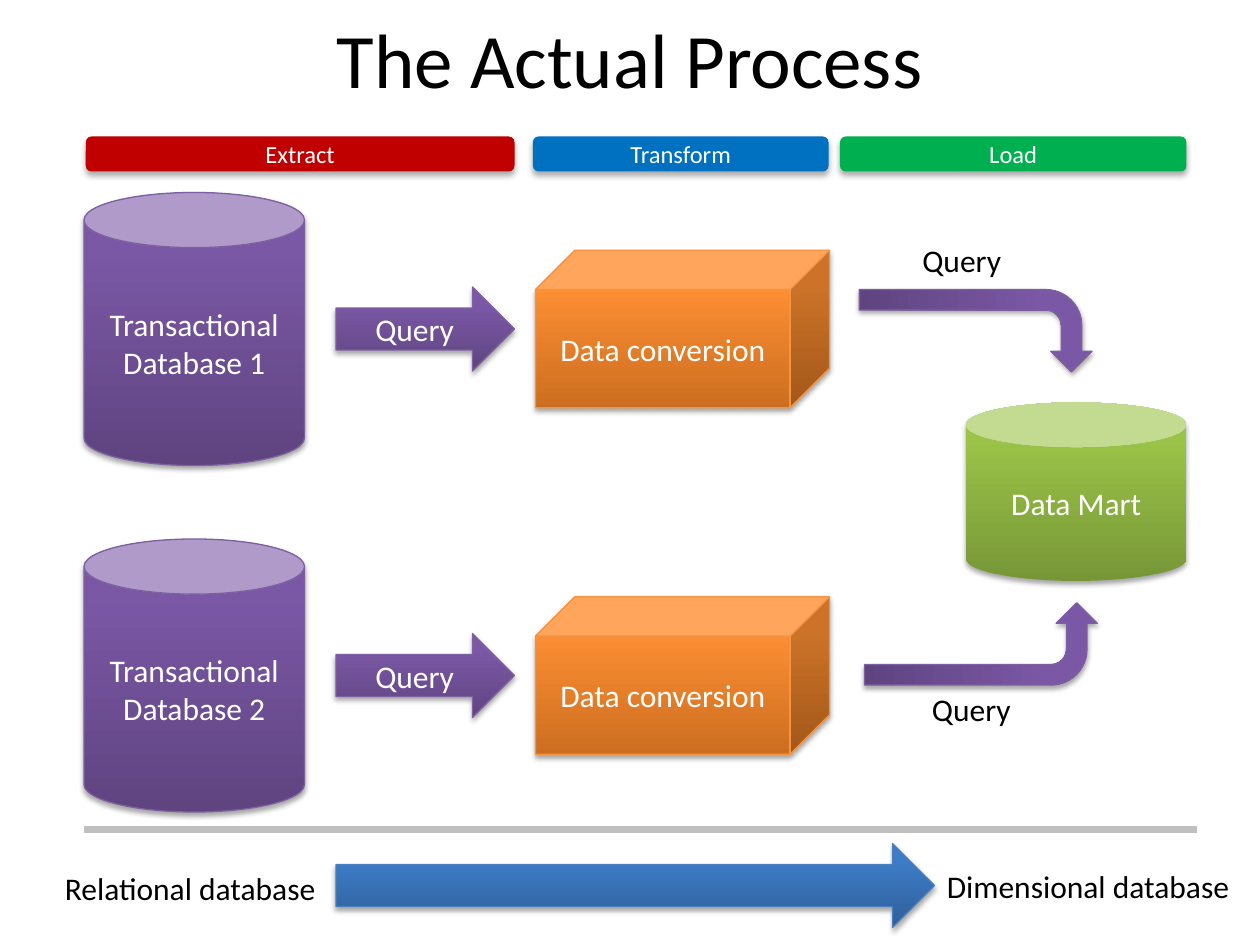
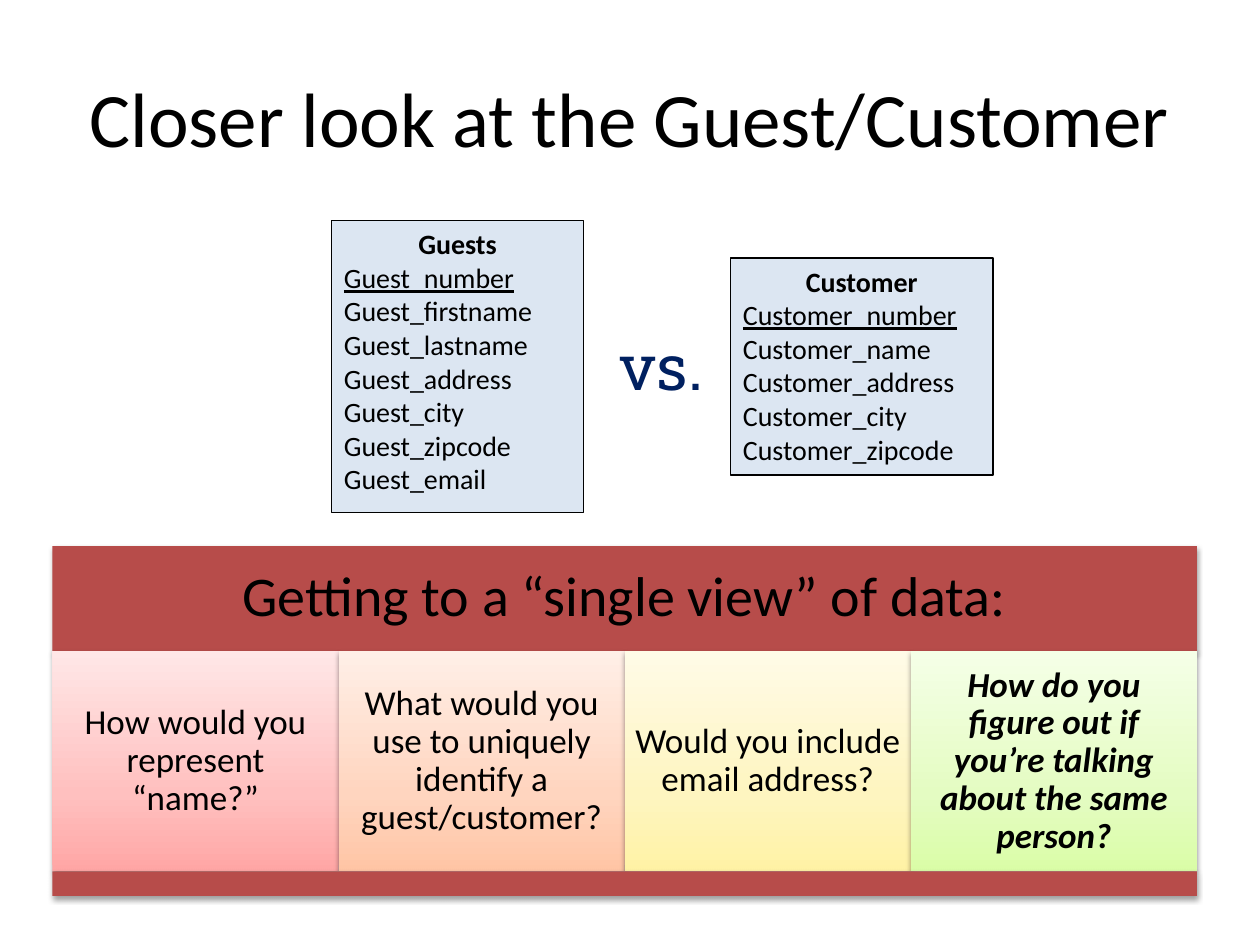
from copy import deepcopy

from lxml import etree
from pptx import Presentation
from pptx import util as u
from pptx.dml.color import RGBColor
from pptx.enum import shapes, text
from pptx.oxml.ns import qn

Pt = u.Pt
SHAPE = shapes.MSO_SHAPE
CENTER, LEFT = text.PP_ALIGN.CENTER, text.PP_ALIGN.LEFT
MIDDLE, TOP = text.MSO_ANCHOR.MIDDLE, text.MSO_ANCHOR.TOP
FONT = "Calibri"
BLACK, WHITE = "000000", "FFFFFF"
PANEL, BRICK, NAVY, GRAY = "DCE6F2", "B74C4A", "002060", "BFBFBF"

# Gradients run from bottom to top as (position, colour) stops.
PURPLE = [(0, "5F4480"), (0.8, "7B58A6"), (1, "7C57A8")]
GREEN = [(0, "779737"), (0.8, "9BC348"), (1, "9DC746")]
ORANGE = [(0, "CC6E20"), (0.8, "FF9034"), (1, "FF9136")]
BLUE = [(0, "2F5F99"), (0.8, "3D7CC7"), (1, "3A7CCB")]
PURPLE_EDGE, ORANGE_EDGE, BLUE_EDGE = "7D60A0", "F69240", "4B7EBC"

# Shadows are (opacity %, blur, distance), always cast downwards.
DEEP, BAR, CARD = (35, 3.1, 1.8), (32, 3.5, 2.2), (38, 3.1, 1.6)


def color(hex_value):
    return RGBColor.from_string(hex_value)


def place(box):
    return [Pt(length) for length in box]


def style_font(font, size, hex_value, name=FONT, bold=False, italic=False):
    font.name, font.size = name, Pt(size)
    font.bold, font.italic = bold, italic
    font.color.rgb = color(hex_value)


def fill_shape(shape, fill):
    """Fill with one colour, or with a gradient given as stops."""
    if isinstance(fill, str):
        shape.fill.solid()
        shape.fill.fore_color.rgb = color(fill)
        return
    shape.fill.gradient()
    shape.fill.gradient_angle = 90
    stop_list = shape.element.spPr.find(".//" + qn("a:gsLst"))
    while len(stop_list) < len(fill):
        stop_list.append(deepcopy(stop_list[0]))
    for stop, (position, hex_value) in zip(shape.fill.gradient_stops, fill):
        stop.position = position
        stop.color.rgb = color(hex_value)


def cast_shadow(shape, shadow):
    opacity, blur, distance = shadow
    effects = shape.element.spPr.find(qn("a:effectLst"))
    outer = etree.SubElement(effects, qn("a:outerShdw"), blurRad=str(Pt(blur)),
                             dist=str(Pt(distance)), dir="5400000", rotWithShape="0")
    black = etree.SubElement(outer, qn("a:srgbClr"), val=BLACK)
    etree.SubElement(black, qn("a:alpha"), val=str(opacity * 1000))


def add_block(page, kind, box, fill, edge=None, shadow=None):
    shape = page.shapes.add_shape(kind, *place(box))
    fill_shape(shape, fill)
    if edge:
        shape.line.color.rgb = color(edge)
        shape.line.width = Pt(0.75)
    else:
        shape.line.fill.background()
    shape.shadow.inherit = False
    if shadow:
        cast_shadow(shape, shadow)
    return shape


def write(shape, words, size=18, hex_value=WHITE, inset=None, spacing=None, **look):
    """Put one centred paragraph in the middle of a shape."""
    frame = shape.text_frame
    frame.word_wrap = True
    frame.vertical_anchor = MIDDLE
    if inset:
        frame.margin_left = frame.margin_right = Pt(inset)
        frame.margin_top = frame.margin_bottom = Pt(inset)
    para = frame.paragraphs[0]
    para.text, para.alignment = words, CENTER
    if spacing:
        para.line_spacing = spacing
    style_font(para.font, size, hex_value, **look)


def add_caption(page, words, box, size=18, hex_value=BLACK, name=FONT):
    frame = page.shapes.add_textbox(*place(box)).text_frame
    frame.word_wrap = False
    frame.auto_size = text.MSO_AUTO_SIZE.SHAPE_TO_FIT_TEXT
    para = frame.paragraphs[0]
    para.text = words
    style_font(para.font, size, hex_value, name)


def add_bent_arrow(page, box, rotation, flipped=False):
    arrow = add_block(page, SHAPE.BENT_ARROW, box, PURPLE, PURPLE_EDGE, DEEP)
    arrow.rotation = rotation
    if flipped:
        arrow.element.spPr.find(qn("a:xfrm")).set("flipV", "1")


def add_rule(page, left, right, y):
    rule = page.shapes.add_connector(shapes.MSO_CONNECTOR.STRAIGHT,
                                     Pt(left), Pt(y), Pt(right), Pt(y))
    rule.line.color.rgb = color(GRAY)
    rule.line.width = Pt(4.5)
    etree.SubElement(rule.element.spPr, qn("a:effectLst"))


def add_entity(page, name, fields, box):
    """Add a data entity: bold name, underlined key, then the other fields."""
    entity = add_block(page, SHAPE.RECTANGLE, box, PANEL, BLACK)
    frame = entity.text_frame
    frame.word_wrap = True
    frame.vertical_anchor = TOP
    frame.auto_size = text.MSO_AUTO_SIZE.SHAPE_TO_FIT_TEXT
    for row, words in enumerate([name] + fields):
        para = frame.add_paragraph() if row else frame.paragraphs[0]
        para.text = words
        para.alignment = LEFT if row else CENTER
        style_font(para.font, 16, BLACK, bold=row == 0)
        para.font.underline = row == 1


def add_page(deck, title, top, height):
    page = deck.slides.add_slide(deck.slide_layouts[5])
    holder = page.shapes.title
    holder.left, holder.top, holder.width, holder.height = place((36, top, 648, height))
    write(holder, title, 44, BLACK)
    return page


def build_process(deck):
    page = add_page(deck, "The Actual Process", 0, 66)

    for number, top in enumerate((110, 308), 1):
        database = add_block(page, SHAPE.CAN, (48, top, 126, 156),
                             PURPLE, PURPLE_EDGE, DEEP)
        write(database, f"Transactional Database {number}")
        query = add_block(page, SHAPE.RIGHT_ARROW, (192, top + 54, 102, 48),
                          PURPLE, PURPLE_EDGE, DEEP)
        write(query, "Query")
        conversion = add_block(page, SHAPE.CUBE, (306, top + 33, 168, 90),
                               ORANGE, ORANGE_EDGE, DEEP)
        write(conversion, "Data conversion")

    mart = add_block(page, SHAPE.CAN, (552, 230, 126, 102), GREEN, shadow=DEEP)
    write(mart, "Data Mart")
    add_bent_arrow(page, (537, 301.5, 47, 133), 270, flipped=True)
    add_bent_arrow(page, (534, 122.5, 47, 133), 90)

    stages = [("Extract", 49, 245, "C00000"), ("Transform", 304.5, 169, "0070C0"),
              ("Load", 480, 198, "00B050")]
    for stage, left, width, fill in stages:
        bar = add_block(page, SHAPE.ROUNDED_RECTANGLE, (left, 78, width, 20),
                        fill, shadow=BAR)
        write(bar, stage, 14)

    captions = [("Query", (520, 134, 64, 29)), ("Query", (525.5, 391, 64, 29)),
                ("Relational database", (30, 493, 159, 29)),
                ("Dimensional database", (534, 492, 178, 29))]
    for words, box in captions:
        add_caption(page, words, box)

    add_block(page, SHAPE.RIGHT_ARROW, (192, 482, 342, 48), BLUE, BLUE_EDGE, DEEP)
    add_rule(page, 48, 684, 474)


def build_comparison(deck):
    page = add_page(deck, "Closer look at the Guest/Customer", 21.5, 90)

    guest_fields = ["number", "firstname", "lastname", "address", "city",
                    "zipcode", "email"]
    customer_fields = ["number", "name", "address", "city", "zipcode"]
    add_entity(page, "Guests", [f"Guest_{field}" for field in guest_fields],
               (189.5, 126, 144, 167))
    add_entity(page, "Customer", [f"Customer_{field}" for field in customer_fields],
               (417.5, 147.5, 150, 124))

    left, width = 30, 654
    header = add_block(page, SHAPE.RECTANGLE, (left, 312, width, 60), BRICK, shadow=CARD)
    write(header, "Getting to a “single view” of data:", 32, BLACK, 9, 0.9)

    questions = [
        ("How would you represent “name?”", ("FFA6A5", "FFC0BF", "FFE7E7")),
        ("What would you use to uniquely identify a guest/customer?",
         ("FFC5A5", "FFD5BF", "FFEFE7")),
        ("Would you include email address?", ("FFF2A5", "FEF5C0", "FFFBE7")),
        ("How do you figure out if you’re talking about the same person?",
         ("DAFDA7", "E4FCC2", "F5FFE7")),
    ]
    card_width = width / len(questions)
    for column, (question, tints) in enumerate(questions):
        card = add_block(page, SHAPE.RECTANGLE,
                         (left + column * card_width, 372, card_width, 126),
                         list(zip((0, 0.35, 1), tints)), shadow=CARD)
        key = column == len(questions) - 1
        write(card, question, 20, BLACK, 5.6, 0.9, bold=key, italic=key)

    add_block(page, SHAPE.RECTANGLE, (left, 498, width, 14), BRICK, shadow=CARD)
    add_caption(page, "vs.", (347, 183.5, 65, 51), 36, NAVY, "Roboto Slab")


def main():
    deck = Presentation()
    deck.slide_width, deck.slide_height = Pt(720), Pt(540)
    build_process(deck)
    build_comparison(deck)
    deck.save("out.pptx")


if __name__ == "__main__":
    main()
